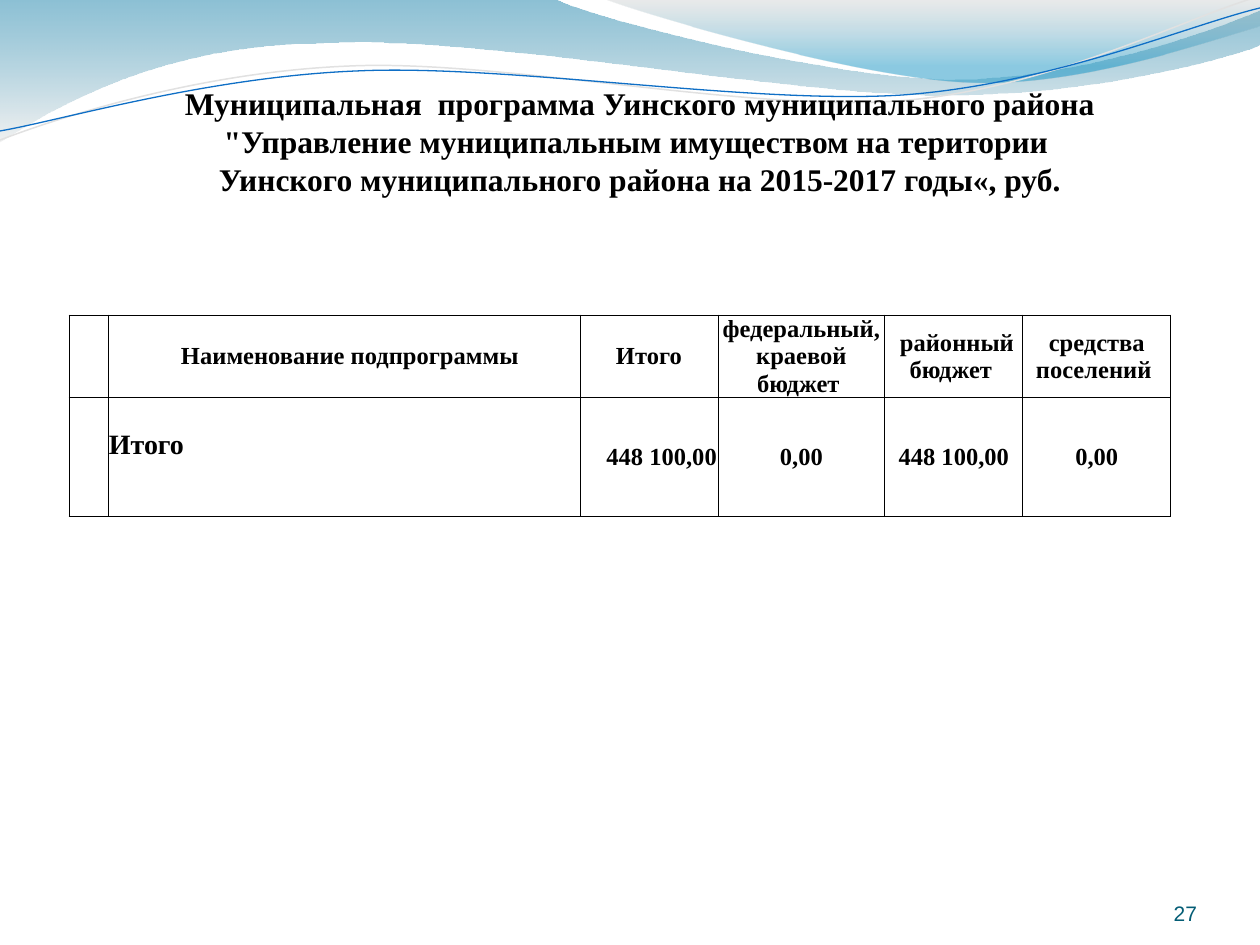
from dataclasses import dataclass
from typing import Optional

import lxml.etree
import pptx
import pptx.dml.color
import pptx.enum.text
import pptx.oxml.ns
import pptx.util

Align = pptx.enum.text.PP_ALIGN
Anchor = pptx.enum.text.MSO_ANCHOR
qn = pptx.oxml.ns.qn
EMU_PER_PX = 914400 / 126
Point = tuple[int, int]


@dataclass(frozen=True)
class Theme:
    serif: str = "Times New Roman"
    sans: str = "Arial"
    ink: str = "000000"
    number_color: str = "045D75"
    deep_blue: str = "0074A1"
    bright_blue: str = "008BBF"
    pale_gray: str = "E7E7E7"
    mid_gray: str = "BDBDBD"
    line_gray: str = "E1E1E1"
    line_blue: str = "0F6FC6"
    title_size: int = 18
    title_pitch: float = 21.7
    table_size: int = 14
    total_size: int = 16
    number_size: int = 12
    border_width: float = 0.5


THEME = Theme()


@dataclass(frozen=True)
class Stop:
    position: float
    color: str
    opacity: int


@dataclass(frozen=True)
class Wave:
    start: Point
    segments: tuple[tuple[Point, ...], ...]
    stops: tuple[Stop, ...] = ()
    line_color: str = ""
    line_width: float = 0


@dataclass(frozen=True)
class Cell:
    text: str = ""
    align: Align = Align.CENTER
    anchor: Anchor = Anchor.MIDDLE
    size: int = THEME.table_size
    left: int = 1
    top: int = 1


@dataclass(frozen=True)
class Label:
    text: str
    box: tuple[int, int, int, int]
    align: Align
    font: str
    size: int
    color: str
    bold: bool = False
    inset: tuple[int, int] = (0, 0)
    pitch: Optional[float] = None


WAVES = (
    Wave(
        (0, -1),
        (
            ((554, -1),),
            ((600, 21), (837, 79), (955, 79)),
            ((1075, 79), (1207, 33), (1260, 11)),
            ((1261, 45),),
            ((1239, 55), (1096, 96), (940, 95)),
            ((784, 95), (481, 35), (324, 43)),
            ((163, 44), (58, 105), (-1, 142)),
        ),
        stops=(Stop(0, THEME.deep_blue, 45), Stop(1, THEME.pale_gray, 55)),
    ),
    Wave(
        (604, -1),
        (
            ((641, 14), (859, 78), (969, 82)),
            ((1079, 87), (1211, 40), (1260, 26)),
            ((1260, 0),),
        ),
        stops=(Stop(0, THEME.mid_gray, 30), Stop(0.8, THEME.bright_blue, 45)),
    ),
    Wave(
        (0, 140),
        (
            ((60, 117), (199, 72), (349, 66)),
            ((498, 59), (747, 112), (898, 101)),
            ((1050, 89), (1182, 19), (1257, -3)),
        ),
        line_color=THEME.line_gray,
        line_width=0.85,
    ),
    Wave(
        (0, 131),
        (
            ((59, 121), (207, 77), (357, 71)),
            ((508, 64), (752, 105), (903, 95)),
            ((1053, 84), (1186, 26), (1260, 8)),
        ),
        line_color=THEME.line_blue,
        line_width=0.75,
    ),
)

COLUMNS = (39, 472, 138, 167, 138, 148)
ROWS = (82, 119)
CELLS = (
    (
        Cell(),
        Cell(" Наименование подпрограммы ", left=13),
        Cell("Итого"),
        Cell("федеральный, краевой бюджет "),
        Cell(" районный бюджет "),
        Cell("средства поселений "),
    ),
    (
        Cell(),
        Cell("Итого", Align.LEFT, Anchor.TOP, THEME.total_size, top=32),
        Cell("448 100,00", Align.RIGHT),
        Cell("0,00"),
        Cell("448 100,00"),
        Cell("0,00"),
    ),
)

LABELS = (
    Label("27", (1092, 876, 105, 50), Align.RIGHT, THEME.sans, THEME.number_size,
          THEME.number_color),
    Label('Муниципальная  программа Уинского муниципального района '
          '"Управление муниципальным имуществом на територии  '
          'Уинского муниципального района на 2015-2017 годы«, руб.',
          (148, 39, 984, 165), Align.CENTER, THEME.serif, THEME.title_size,
          THEME.ink, True, (13, 6), THEME.title_pitch),
)


def px(length: int) -> pptx.util.Emu:
    return pptx.util.Emu(round(length * EMU_PER_PX))


def rgb(color: str) -> pptx.dml.color.RGBColor:
    return pptx.dml.color.RGBColor.from_string(color)


def add_run(paragraph, text: str, font: str, size: int, color: str, bold: bool) -> None:
    run = paragraph.add_run()
    run.text = text
    run.font.name = font
    run.font.size = pptx.util.Pt(size)
    run.font.bold = bold
    run.font.color.rgb = rgb(color)


def bend_segments(shape, wave: Wave) -> None:
    lines = list(shape._element.iter(qn("a:lnTo")))
    for line, segment in zip(lines, wave.segments):
        if len(segment) == 3:
            curve = lxml.etree.Element(qn("a:cubicBezTo"))
            for x, y in segment:
                lxml.etree.SubElement(curve, qn("a:pt"), x=str(px(x) - shape.left),
                                      y=str(px(y) - shape.top))
            line.getparent().replace(line, curve)


def draw_wave(slide, wave: Wave) -> None:
    builder = slide.shapes.build_freeform(px(wave.start[0]), px(wave.start[1]))
    ends = [(px(segment[-1][0]), px(segment[-1][1])) for segment in wave.segments]
    builder.add_line_segments(ends, close=bool(wave.stops))
    shape = builder.convert_to_shape()
    bend_segments(shape, wave)
    shape.shadow.inherit = False
    if not wave.stops:
        shape.fill.background()
        shape.line.color.rgb = rgb(wave.line_color)
        shape.line.width = pptx.util.Pt(wave.line_width)
        return
    shape.line.fill.background()
    shape.fill.gradient()
    shape.fill.gradient_angle = 270
    for gradient_stop, stop in zip(shape.fill.gradient_stops, wave.stops):
        gradient_stop.position = stop.position
        gradient_stop.color.rgb = rgb(stop.color)
    colors = shape._element.spPr.iter(qn("a:srgbClr"))
    for color, stop in zip(colors, wave.stops):
        lxml.etree.SubElement(color, qn("a:alpha"), val=str(stop.opacity * 1000))


def draw_label(slide, label: Label) -> None:
    frame = slide.shapes.add_textbox(*map(px, label.box)).text_frame
    frame.word_wrap = True
    frame.vertical_anchor = Anchor.BOTTOM
    frame.margin_left = frame.margin_right = px(label.inset[0])
    frame.margin_top = frame.margin_bottom = px(label.inset[1])
    paragraph = frame.paragraphs[0]
    paragraph.alignment = label.align
    if label.pitch:
        paragraph.line_spacing = pptx.util.Pt(label.pitch)
    add_run(paragraph, label.text, label.font, label.size, label.color, label.bold)


def draw_borders(table_cell) -> None:
    properties = table_cell._tc.get_or_add_tcPr()
    width = str(pptx.util.Pt(THEME.border_width))
    for index, side in enumerate(("a:lnL", "a:lnR", "a:lnT", "a:lnB")):
        line = lxml.etree.Element(qn(side), w=width)
        fill = lxml.etree.SubElement(line, qn("a:solidFill"))
        lxml.etree.SubElement(fill, qn("a:srgbClr"), val=THEME.ink)
        properties.insert(index, line)


def draw_table(slide) -> None:
    table = slide.shapes.add_table(len(ROWS), len(COLUMNS), px(69), px(315),
                                   px(sum(COLUMNS)), px(sum(ROWS))).table
    table.first_row = table.horz_banding = False
    for column, width in zip(table.columns, COLUMNS):
        column.width = px(width)
    for row, height, cells in zip(table.rows, ROWS, CELLS):
        row.height = px(height)
        for table_cell, cell in zip(row.cells, cells):
            table_cell.fill.background()
            table_cell.vertical_anchor = cell.anchor
            table_cell.margin_left, table_cell.margin_right = px(cell.left), px(1)
            table_cell.margin_top, table_cell.margin_bottom = px(cell.top), 0
            draw_borders(table_cell)
            if cell.text:
                paragraph = table_cell.text_frame.paragraphs[0]
                paragraph.alignment = cell.align
                add_run(paragraph, cell.text, THEME.serif, cell.size, THEME.ink, True)


def main() -> None:
    presentation = pptx.Presentation()
    presentation.slide_width, presentation.slide_height = px(1260), px(945)
    slide = presentation.slides.add_slide(presentation.slide_layouts[6])
    for wave in WAVES:
        draw_wave(slide, wave)
    draw_table(slide)
    for label in LABELS:
        draw_label(slide, label)
    presentation.save("out.pptx")


if __name__ == "__main__":
    main()
